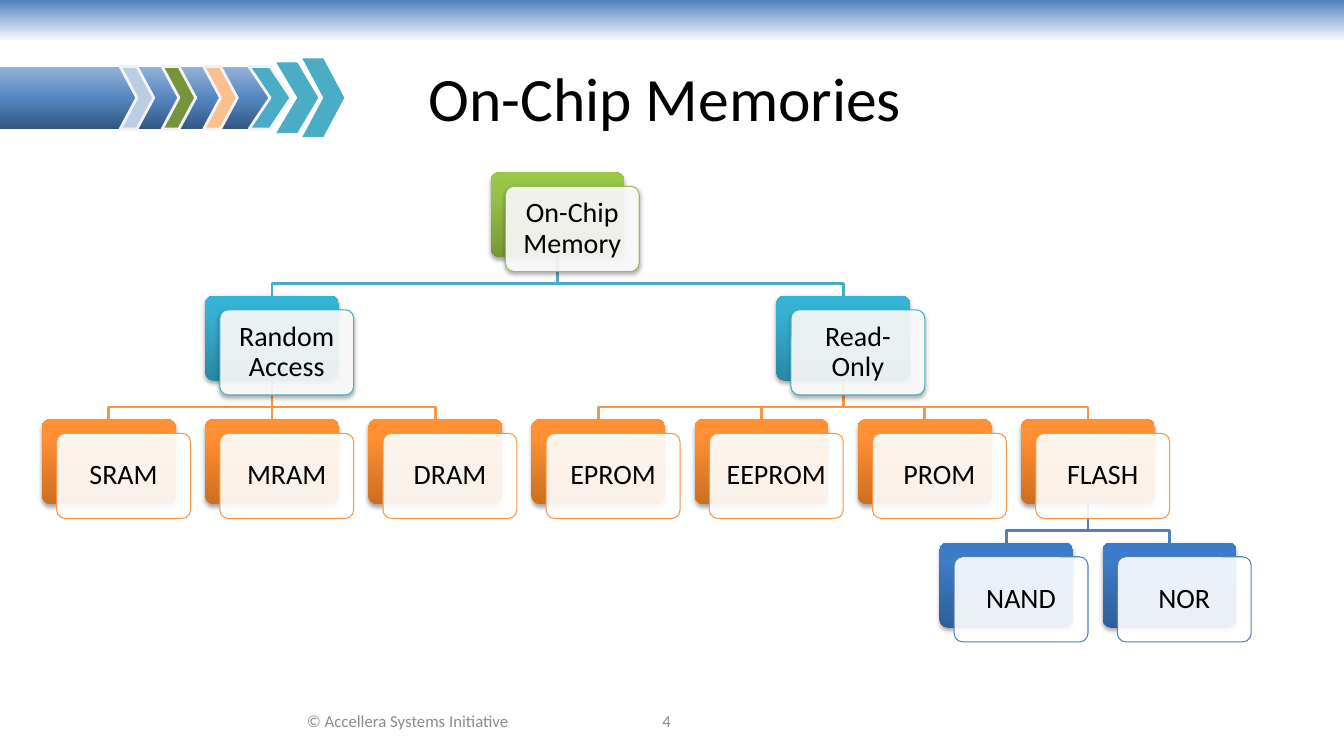
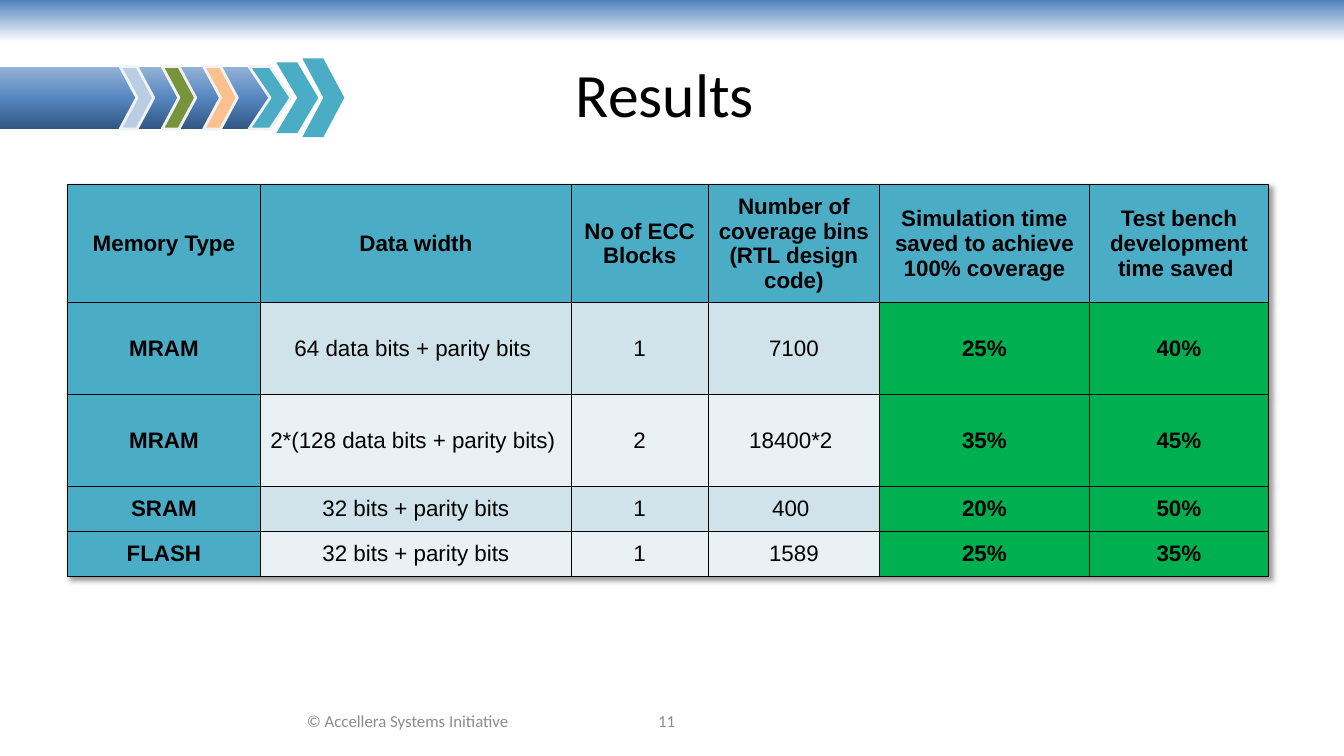
import collections

import lxml.etree
import pptx
import pptx.dml.color
import pptx.enum.shapes
import pptx.enum.text
import pptx.oxml.ns
import pptx.util

Box = collections.namedtuple("Box", "left top width height")
Node = collections.namedtuple("Node", "label parent column row")

GRID_COLUMNS, GRID_ROWS = 160, 90
CELL = pptx.util.Inches(1) / 12
SLIDE_BOX = Box(0, 0, GRID_COLUMNS, GRID_ROWS)
SHAPES = pptx.enum.shapes.MSO_SHAPE
CENTER = pptx.enum.text.PP_ALIGN.CENTER
MIDDLE = pptx.enum.text.MSO_ANCHOR.MIDDLE

COLORS = {
    "black": "000000", "white": "FFFFFF", "blue": "4F81BD", "teal": "4BACC6",
    "orange": "F79646", "green": "9BBB59", "footer": "8C8C8C", "outline": "F2F2F2",
    "pale": "B9CDE5", "olive": "77933C", "peach": "FAC090", "saved": "00B050",
    "band_dark": "D0E3EA", "band_light": "E9F1F5",
}
GRADIENTS = {
    "band": ([(0, "4F81BD"), (100, "FFFFFF")], 90),
    "stripe": ([(0, "315683"), (48, "5485BF"), (100, "95B3D7")], 270),
    "green": ([(0, "779737"), (80, "9BC348"), (100, "9DC746")], 270),
    "teal": ([(0, "2A88A2"), (80, "37B1D2"), (100, "34B4D6")], 270),
    "orange": ([(0, "CC6E20"), (80, "FF9034"), (100, "FF9136")], 270),
    "blue": ([(0, "2F5F99"), (80, "3D7CC7"), (100, "3A7CCB")], 270),
}
FONTS = {
    "title": {"name": "Calibri", "size": pptx.util.Pt(44)},
    "card": {"name": "Calibri", "size": pptx.util.Pt(20)},
    "footer": {"name": "Calibri", "size": pptx.util.Pt(12)},
    "table": {"name": "Arial", "size": pptx.util.Pt(16)},
}
CARD_SHADOW = {"blurRad": "40000", "dist": "23000", "dir": "5400000"}
TABLE_SHADOW = {"blurRad": "50800", "dist": "38100", "dir": "2700000"}

CHEVRONS = [
    (14.3, 4, 7.44, "pale", True), (19.3, 4, 7.44, "olive", True),
    (24.25, 4, 7.44, "peach", True), (29.65, 5, 7.44, "teal", True),
    (32.9, 5, 8.4, "teal", False), (36, 5, 9.36, "teal", False),
]
LEVEL_COLORS = ["green", "teal", "orange", "blue"]
MEMORY_NODES = [
    Node("On-Chip Memory", None, 2.75, 0),
    Node("Random Access", "On-Chip Memory", 1, 1),
    Node("Read-Only", "On-Chip Memory", 4.5, 1),
    Node("SRAM", "Random Access", 0, 2),
    Node("MRAM", "Random Access", 1, 2),
    Node("DRAM", "Random Access", 2, 2),
    Node("EPROM", "Read-Only", 3, 2),
    Node("EEPROM", "Read-Only", 4, 2),
    Node("PROM", "Read-Only", 5, 2),
    Node("FLASH", "Read-Only", 6, 2),
    Node("NAND", "FLASH", 5.5, 3),
    Node("NOR", "FLASH", 6.5, 3),
]
RESULT_WIDTHS = [23.04, 36.96, 16.32, 20.4, 24.96, 21.36]
RESULT_HEIGHTS = [14.04, 10.92, 10.92, 5.4, 5.4]
RESULT_ROWS = [
    ["Memory Type", "Data width", "No of ECC Blocks",
     "Number of coverage bins (RTL design code)",
     "Simulation time saved to achieve 100% coverage",
     "Test bench development time saved "],
    ["MRAM", "64 data bits + parity bits ", "1", "7100", "25%", "40%"],
    ["MRAM", "2*(128 data bits + parity bits) ", "2", "18400*2 ", "35%", "45%"],
    ["SRAM", "32 bits + parity bits", "1", "400 ", "20%", "50%"],
    ["FLASH", "32 bits + parity bits", "1", "1589", "25%", "35%"],
]


def color(name):
    """Return the named colour."""
    return pptx.dml.color.RGBColor.from_string(COLORS[name])


def cells(*lengths):
    """Turn grid lengths into whole slide units."""
    return [pptx.util.Emu(round(length * CELL)) for length in lengths]


def assign(target, values):
    """Set each attribute named in a dict."""
    for name, value in values.items():
        setattr(target, name, value)


def add_xml(parent, tag, **attributes):
    """Append a drawing element and return it."""
    return lxml.etree.SubElement(parent, pptx.oxml.ns.qn("a:" + tag), attributes)


def add_shadow(effects, shadow, alpha):
    """Put an outer shadow in an effect list."""
    outer = add_xml(effects, "outerShdw", **shadow, algn="t", rotWithShape="0")
    add_xml(add_xml(outer, "srgbClr", val=COLORS["black"]), "alpha", val=str(alpha * 1000))


def fill_gradient(shape, name):
    """Fill a shape with a named linear gradient."""
    stops, angle = GRADIENTS[name]
    shape.fill.gradient()
    gradient = shape._element.spPr.find(pptx.oxml.ns.qn("a:gradFill"))
    stop_list = gradient.find(pptx.oxml.ns.qn("a:gsLst"))
    for stop in list(stop_list):
        stop_list.remove(stop)
    for position, value in stops:
        stop = add_xml(stop_list, "gs", pos=str(position * 1000))
        add_xml(stop, "srgbClr", val=value)
    gradient.find(pptx.oxml.ns.qn("a:lin")).set("ang", str(angle * 60000))


def add_box(slide, kind, box, fill=None, gradient=None, line=None, line_width=2, shadow=False):
    """Add a preset shape with its fill, line and shadow."""
    shape = slide.shapes.add_shape(kind, *cells(*box))
    shape.shadow.inherit = False
    if gradient:
        fill_gradient(shape, gradient)
    else:
        shape.fill.solid()
        shape.fill.fore_color.rgb = color(fill)
    if line:
        shape.line.color.rgb = color(line)
        shape.line.width = pptx.util.Pt(line_width)
    else:
        shape.line.fill.background()
    if shadow:
        add_shadow(shape._element.spPr.find(pptx.oxml.ns.qn("a:effectLst")), CARD_SHADOW, 35)
    return shape


def write_text(frame, text, style, color_name="black", spacing=None):
    """Write one centred paragraph in a frame."""
    assign(frame, {"word_wrap": True, "vertical_anchor": MIDDLE})
    paragraph = frame.paragraphs[0]
    run = paragraph.add_run()
    run.text = text
    assign(paragraph, {"alignment": CENTER, "line_spacing": spacing})
    assign(run.font, FONTS[style])
    run.font.color.rgb = color(color_name)


def add_label(slide, box, text, style, color_name="black"):
    """Add a text box with one line of text."""
    write_text(slide.shapes.add_textbox(*cells(*box)).text_frame, text, style, color_name)


def add_stripe(slide, box):
    """Draw the striped bar and its row of chevrons."""
    add_box(slide, SHAPES.RECTANGLE, box, gradient="stripe")
    middle = box.top + box.height / 2
    for left, width, height, fill, outlined in CHEVRONS:
        chevron = Box(box.left + left, middle - height / 2, width, height)
        add_box(slide, SHAPES.CHEVRON, chevron, fill, line="outline" if outlined else None)


def add_frame(presentation, box, title, title_box, number):
    """Add a slide with the band, title, footer and stripe."""
    slide = presentation.slides.add_slide(presentation.slide_layouts[6])
    add_box(slide, SHAPES.RECTANGLE, box._replace(height=5), gradient="band")
    add_label(slide, title_box, title, "title")
    footer_top = box.top + box.height - 6.6
    add_label(slide, Box(29.25, footer_top, 38.6, 4.8),
              "© Accellera Systems Initiative", "footer", "footer")
    add_label(slide, Box(64, footer_top, 30.7, 4.8), number, "footer", "footer")
    add_stripe(slide, Box(box.left, 7.92, 32.3, 7.44))
    return slide


def add_link(slide, start, end, line):
    """Join a parent to a child, with a bend when they are not aligned."""
    (start_x, start_y), (end_x, end_y) = start, end
    if abs(start_x - end_x) < 0.01:
        kind = pptx.enum.shapes.MSO_CONNECTOR.STRAIGHT
        link = slide.shapes.add_connector(kind, *cells(*start, *end))
        add_xml(link._element.spPr, "effectLst")
    else:
        bend = start_y + (end_y - start_y) * 0.68
        builder = slide.shapes.build_freeform(*cells(*start))
        points = [(start_x, bend), (end_x, bend), end]
        builder.add_line_segments([cells(*point) for point in points], close=False)
        link = builder.convert_to_shape()
        link.shadow.inherit = False
        link.fill.background()
    link.line.color.rgb = color(line)
    link.line.width = pptx.util.Pt(2)


def add_card(slide, box, text, level):
    """Draw a tinted back card under a lettered front card."""
    name = LEVEL_COLORS[level]
    front_box = box._replace(left=box.left + 1.75, top=box.top + 1.68)
    back = add_box(slide, SHAPES.ROUNDED_RECTANGLE, box, gradient=name, shadow=True)
    front = add_box(slide, SHAPES.ROUNDED_RECTANGLE, front_box, "white",
                    line=name, line_width=0.75, shadow=level < 2)
    for card in (back, front):
        card.adjustments[0] = 0.1
    fill = front._element.spPr.find(pptx.oxml.ns.qn("a:solidFill"))
    add_xml(fill[0], "alpha", val="90000")
    inset = pptx.util.Inches(0.08)
    sides = ("left", "top", "right", "bottom")
    assign(front.text_frame, {"margin_" + side: inset for side in sides})
    write_text(front.text_frame, text, "card", spacing=0.9)


def add_tree(slide, box, nodes):
    """Lay out a tree of cards on an even grid of columns and rows."""
    pitch_x, pitch_y = box.width / 7.5, box.height / 4
    card_width, card_height = pitch_x * 0.82, pitch_y * 0.69
    places = {
        node.label: Box(box.left + node.column * pitch_x, box.top + node.row * pitch_y,
                        card_width, card_height)
        for node in nodes
    }
    for node in nodes:
        if node.parent:
            parent, child = places[node.parent], places[node.label]
            add_link(slide, (parent.left + card_width / 2, parent.top + card_height),
                     (child.left + card_width / 2, child.top), LEVEL_COLORS[node.row])
    for node in nodes:
        add_card(slide, places[node.label], node.label, node.row)


def border_cell(cell):
    """Draw a thin black line on every side of a cell."""
    properties = cell._tc.get_or_add_tcPr()
    for index, tag in enumerate(("lnL", "lnR", "lnT", "lnB")):
        line = add_xml(properties, tag, w="12700")
        add_xml(add_xml(line, "solidFill"), "srgbClr", val=COLORS["black"])
        properties.insert(index, line)


def add_results(slide, box, rows):
    """Add the results table with its fills, borders and shadow."""
    frame = slide.shapes.add_table(len(rows), len(rows[0]), *cells(*box))
    table = frame.table
    assign(table, {"first_row": False, "horz_banding": False})
    effects = add_xml(table._tbl.tblPr, "effectLst")
    table._tbl.tblPr.insert(0, effects)
    add_shadow(effects, TABLE_SHADOW, 40)
    for column, width in zip(table.columns, cells(*RESULT_WIDTHS)):
        column.width = width
    for row, height in zip(table.rows, cells(*RESULT_HEIGHTS)):
        row.height = height
    side = pptx.util.Inches(0.07)
    margins = {"margin_left": side, "margin_right": side, "margin_top": 0, "margin_bottom": 0}
    for row_index, row in enumerate(rows):
        for column_index, text in enumerate(row):
            heading = row_index == 0 or column_index == 0
            saved = column_index >= 4
            band = "band_dark" if row_index % 2 else "band_light"
            cell = table.cell(row_index, column_index)
            cell.fill.solid()
            cell.fill.fore_color.rgb = color("teal" if heading else "saved" if saved else band)
            write_text(cell.text_frame, text, "table")
            cell.text_frame.paragraphs[0].runs[0].font.bold = heading or saved
            assign(cell, {**margins, "vertical_anchor": MIDDLE})
            border_cell(cell)


def main():
    """Build and save both slides."""
    presentation = pptx.Presentation()
    width, height = cells(GRID_COLUMNS, GRID_ROWS)
    assign(presentation, {"slide_width": width, "slide_height": height})
    memories = add_frame(presentation, SLIDE_BOX, "On-Chip Memories ", Box(11, 4, 138, 15), "4")
    add_tree(memories, Box(5, 20.5, 145.7, 58.8), MEMORY_NODES)
    results = add_frame(presentation, SLIDE_BOX, "Results ", Box(8, 3.6, 144, 15), "11")
    add_results(results, Box(8, 22, sum(RESULT_WIDTHS), sum(RESULT_HEIGHTS)), RESULT_ROWS)
    presentation.save("out.pptx")


if __name__ == "__main__":
    main()
